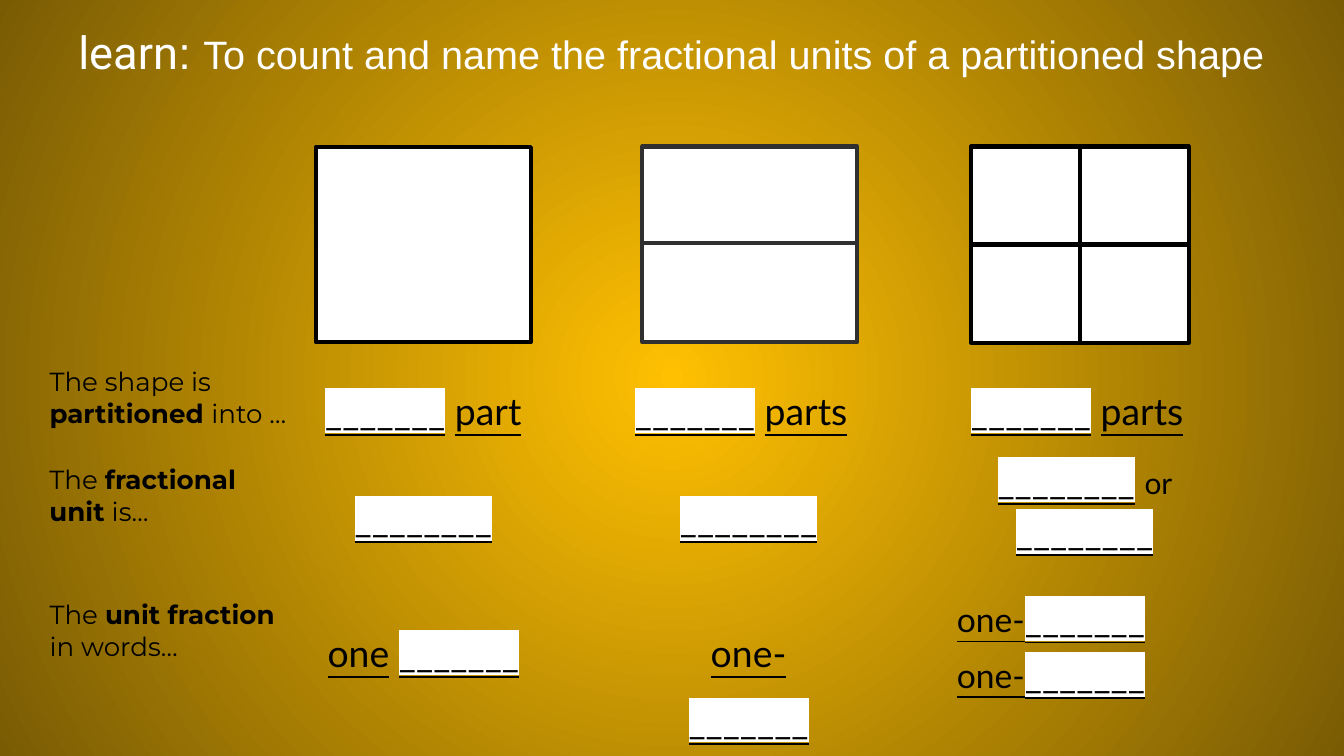
from dataclasses import dataclass
from itertools import product

from lxml.etree import SubElement
from pptx import Presentation
from pptx.dml.color import RGBColor as Rgb
from pptx.enum.shapes import MSO_SHAPE as Preset
from pptx.enum.text import MSO_AUTO_SIZE as AutoSize, PP_ALIGN as Align
from pptx.oxml.ns import qn
from pptx.slide import Slide
from pptx.util import Emu, Pt

PX = 4572  # 200 px to the inch
COLOURS = {"black": "000000", "white": "FFFFFF", "charcoal": "303030",
           "amber": "FFC002", "bronze": "795B04"}


@dataclass(frozen=True)
class Span:
    text: str
    size: float = 20
    font: str = "Lato"
    colour: str = "black"
    bold: bool = False
    underline: bool = False
    highlight: bool = False


@dataclass(frozen=True)
class Label:
    left: int
    top: int
    width: int
    height: int
    spans: tuple[Span, ...]
    spacing: float = 1.5
    align: Align = Align.CENTER
    fit: AutoSize = AutoSize.SHAPE_TO_FIT_TEXT


@dataclass(frozen=True)
class Partition:
    left: int
    top: int
    cell_width: int
    cell_height: int
    columns: int = 1
    rows: int = 1
    overlap: int = 0
    line: str = "black"


def px(length: int) -> Emu:
    return Emu(length * PX)


def rgb(name: str) -> Rgb:
    return Rgb.from_string(COLOURS[name])


def blank(length: int) -> Span:
    return Span("_" * length, underline=True, highlight=True)


def word(text: str, size: float = 20) -> Span:
    return Span(text, size, underline=True)


def prompt(top: int, width: int, before: str, key: str, after: str) -> Label:
    spans = tuple(Span(text, 14, "Montserrat", bold=text == key)
                  for text in (before, key, after))
    return Label(54, top, width, 134, spans, 1.0, Align.LEFT)


def paint_background(page: Slide) -> None:
    fill = page.background.fill
    fill.gradient()
    for stop, name in zip(fill.gradient_stops, ("amber", "bronze")):
        stop.color.rgb = rgb(name)
    # Turn the linear gradient into a circle around the centre
    linear = next(page.element.iter(qn("a:lin")))
    gradient = linear.getparent()
    gradient.remove(linear)
    circle = SubElement(gradient, qn("a:path"), {"path": "circle"})
    SubElement(circle, qn("a:fillToRect"), dict.fromkeys("ltrb", "50000"))


def draw_partition(page: Slide, part: Partition) -> None:
    step = part.cell_height - part.overlap
    for row, column in product(range(part.rows), range(part.columns)):
        cell = page.shapes.add_shape(
            Preset.RECTANGLE,
            px(part.left + column * part.cell_width), px(part.top + row * step),
            px(part.cell_width), px(part.cell_height))
        cell.shadow.inherit = False
        cell.fill.solid()
        cell.fill.fore_color.rgb = rgb("white")
        cell.line.color.rgb = rgb(part.line)
        cell.line.width = Pt(2.25)


def draw_label(page: Slide, label: Label) -> None:
    box = page.shapes.add_textbox(px(label.left), px(label.top), px(label.width), px(label.height))
    frame = box.text_frame
    frame.word_wrap = True
    frame.auto_size = label.fit
    frame.margin_left = frame.margin_right = frame.margin_top = frame.margin_bottom = px(20)
    para = frame.paragraphs[0]
    para.alignment = label.align
    para.line_spacing = label.spacing
    for span in label.spans:
        run = para.add_run()
        run.text = span.text
        font = run.font
        font.size = Pt(span.size)
        font.bold = span.bold
        font.underline = span.underline
        font.color.rgb = rgb(span.colour)
        if span.highlight:  # sits between the fill and the typeface
            marker = SubElement(run._r.get_or_add_rPr(), qn("a:highlight"))
            SubElement(marker, qn("a:srgbClr"), val=COLOURS["white"])
        font.name = span.font


PARTITIONS = (
    Partition(470, 219, 320, 290),
    Partition(956, 218, 320, 147, rows=2, overlap=3, line="charcoal"),
    Partition(1445, 218, 162, 146, columns=2, rows=2),
)

TITLE = Label(68, 16, 1864, 134, (
    Span("learn", 24.2, "Roboto", "white"),
    Span(": ", 24.2, "Arial", "white"),
    Span("To count and name the fractional units of a partitioned shape", 21.2, "Arial", "white"),
), 1.0, fit=AutoSize.NONE)

PROMPTS = (
    prompt(524, 436, "The shape is ", "partitioned ", "into …"),
    prompt(670, 320, "The ", "fractional unit", " is…"),
    prompt(871, 416, "The ", "unit fraction", " in words…"),
)

# Number of parts, under each shape
PART_COUNTS = tuple(
    Label(left, 524, 416, 108, (blank(7), Span(" "), word(noun)))
    for left, noun in ((422, "part"), (895, "parts"), (1395, "parts")))

# Fractional unit
UNITS = (
    *(Label(left, 684, 416, 108, (blank(8),)) for left in (422, 906)),
    Label(1406, 650, 416, 186, (blank(8), Span(" "), Span("or ", 16), blank(8)), 1.15),
)

# Unit fraction in words
FRACTIONS = (
    Label(456, 884, 348, 108, (word("one"), Span(" "), blank(7))),
    Label(952, 884, 324, 108, (word("one-"), blank(7))),
    *(Label(1402, top, 324, 108, (word("one-", 18), blank(7))) for top in (833, 916)),
)


def main() -> None:
    deck = Presentation()
    deck.slide_width, deck.slide_height = px(2000), px(1125)
    page = deck.slides.add_slide(deck.slide_layouts[6])
    paint_background(page)
    for part in PARTITIONS:
        draw_partition(page, part)
    for label in (TITLE, *PROMPTS, *PART_COUNTS, *UNITS, *FRACTIONS):
        draw_label(page, label)
    deck.save("out.pptx")


if __name__ == "__main__":
    main()
